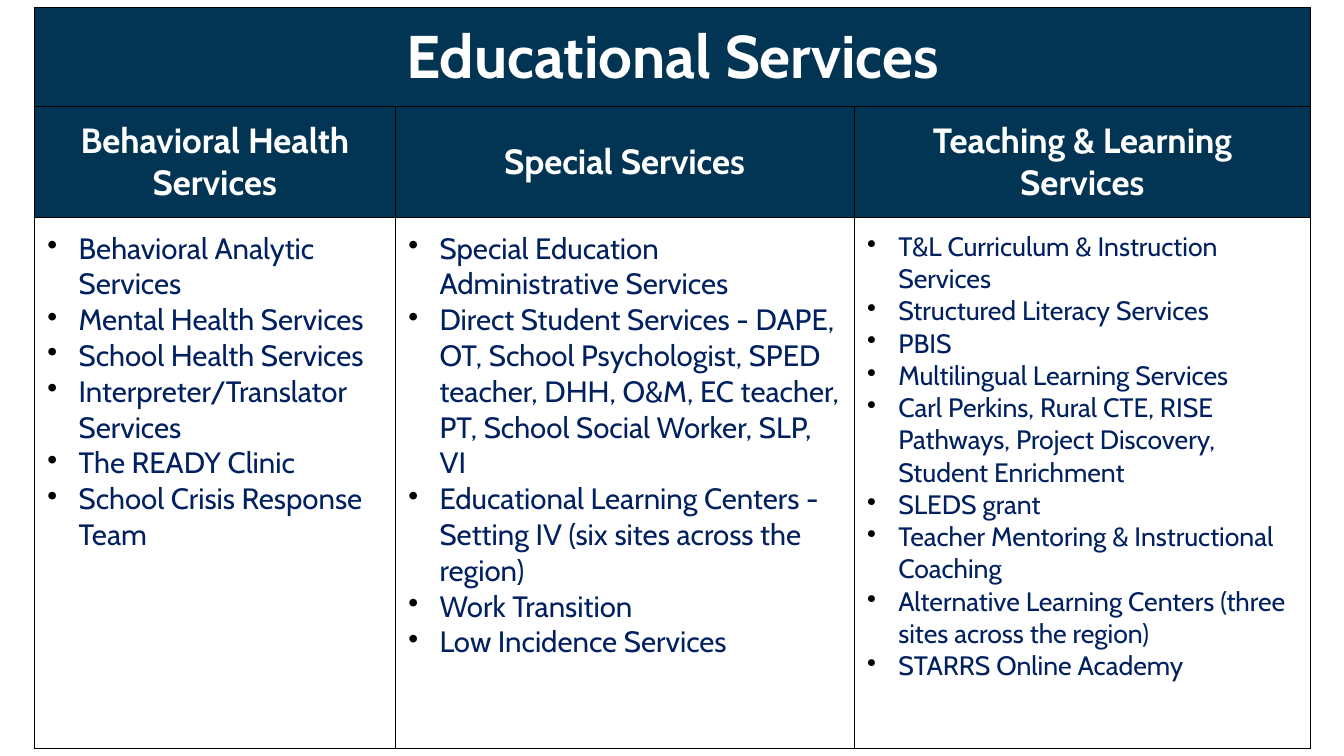
"""Build the slide that lists educational services in one table."""
from dataclasses import dataclass

from lxml import etree
from pptx import Presentation
from pptx.dml.color import RGBColor
from pptx.enum.text import MSO_ANCHOR, PP_ALIGN
from pptx.oxml.ns import qn
from pptx.table import Table, _Cell
from pptx.util import Inches, Pt

MIDDLE, TOP = MSO_ANCHOR.MIDDLE, MSO_ANCHOR.TOP
CENTER, LEFT = PP_ALIGN.CENTER, PP_ALIGN.LEFT
FONT = "Cabin"
NAVY, INK, WHITE, BLACK = "023453", "002060", "FFFFFF", "000000"
PAD, INDENT = Inches(0.13), Inches(0.31)
WIDTHS = (3.58, 4.55, 4.53)
HEIGHTS = (0.98, 1.1, 5.27)


@dataclass
class Service:
    """One column of the table."""
    head: str
    size: int
    items: list[str]


SERVICES = [
    Service("Behavioral Health Services", 21, [
        "Behavioral Analytic Services",
        "Mental Health Services",
        "School Health Services",
        "Interpreter/Translator Services",
        "The READY Clinic",
        "School Crisis Response Team",
    ]),
    Service("Special Services", 21, [
        "Special Education Administrative Services",
        "Direct Student Services - DAPE, OT, School Psychologist, SPED "
        "teacher, DHH, O&M, EC teacher, PT, School Social Worker, SLP, VI",
        "Educational Learning Centers - Setting IV "
        "(six sites across the region)",
        "Work Transition",
        "Low Incidence Services",
    ]),
    Service("Teaching & Learning Services", 19, [
        "T&L Curriculum & Instruction Services",
        "Structured Literacy Services",
        "PBIS",
        "Multilingual Learning Services",
        "Carl Perkins, Rural CTE, RISE Pathways, Project Discovery, "
        "Student Enrichment",
        "SLEDS grant",
        "Teacher Mentoring & Instructional Coaching",
        "Alternative Learning Centers (three sites across the region)",
        "STARRS Online Academy",
    ]),
]


def color(text: str) -> RGBColor:
    """Turn a hex string into a colour."""
    return RGBColor.from_string(text)


def apply(target: object, values: dict) -> None:
    """Set each named value on the target."""
    for name, value in values.items():
        setattr(target, name, value)


def paint(parent: etree._Element, tag: str) -> etree._Element:
    """Add a child that holds a black colour."""
    child = etree.SubElement(parent, qn(tag))
    etree.SubElement(child, qn("a:srgbClr"), val=BLACK)
    return child


def border(cell: _Cell) -> None:
    """Draw a thin black line on all sides of a cell."""
    props = cell._tc.get_or_add_tcPr()
    for spot, side in enumerate(("a:lnL", "a:lnR", "a:lnT", "a:lnB")):
        line = etree.Element(qn(side), w=str(Pt(0.75)))
        paint(line, "a:solidFill")
        props.insert(spot, line)


def bullet(para: object) -> None:
    """Give a paragraph a black bullet and a hanging indent."""
    props = para._p.get_or_add_pPr()
    props.set("marL", str(INDENT))
    props.set("indent", str(-INDENT))
    paint(props, "a:buClr")
    etree.SubElement(props, qn("a:buChar"), char="•")


def write(cell: _Cell, lines: list[str], size: int, head: bool) -> None:
    """Fill a cell with a heading or a bulleted list."""
    apply(cell, {"margin_left": PAD, "margin_right": PAD,
                 "margin_top": PAD, "margin_bottom": PAD,
                 "vertical_anchor": MIDDLE if head else TOP})
    if head:
        cell.fill.solid()
        cell.fill.fore_color.rgb = color(NAVY)
    else:
        cell.fill.background()
    frame = cell.text_frame
    for spot, line in enumerate(lines):
        para = frame.add_paragraph() if spot else frame.paragraphs[0]
        para.alignment = CENTER if head else LEFT
        if not head:
            bullet(para)
        run = para.add_run()
        run.text = line
        apply(run.font, {"name": FONT, "size": Pt(size), "bold": head})
        run.font.color.rgb = color(WHITE if head else INK)


def fill(table: Table) -> None:
    """Size the table and write its cells."""
    apply(table, {"first_row": False, "horz_banding": False})
    for col, width in zip(table.columns, WIDTHS):
        col.width = Inches(width)
    for row, height in zip(table.rows, HEIGHTS):
        row.height = Inches(height)
    table.cell(0, 0).merge(table.cell(0, len(WIDTHS) - 1))
    write(table.cell(0, 0), ["Educational Services"], 43, True)
    for col, service in enumerate(SERVICES):
        write(table.cell(1, col), [service.head], 25, True)
        write(table.cell(2, col), service.items, service.size, False)
    for cell in table.iter_cells():
        border(cell)


def main() -> None:
    """Make the slide and save it."""
    deck = Presentation()
    apply(deck, {"slide_width": Inches(13.33), "slide_height": Inches(7.5)})
    slide = deck.slides.add_slide(deck.slide_layouts[6])
    frame = slide.shapes.add_table(
        len(HEIGHTS), len(WIDTHS), Inches(0.34), Inches(0.07),
        Inches(sum(WIDTHS)), Inches(sum(HEIGHTS)))
    fill(frame.table)
    deck.save("out.pptx")


if __name__ == "__main__":
    main()
